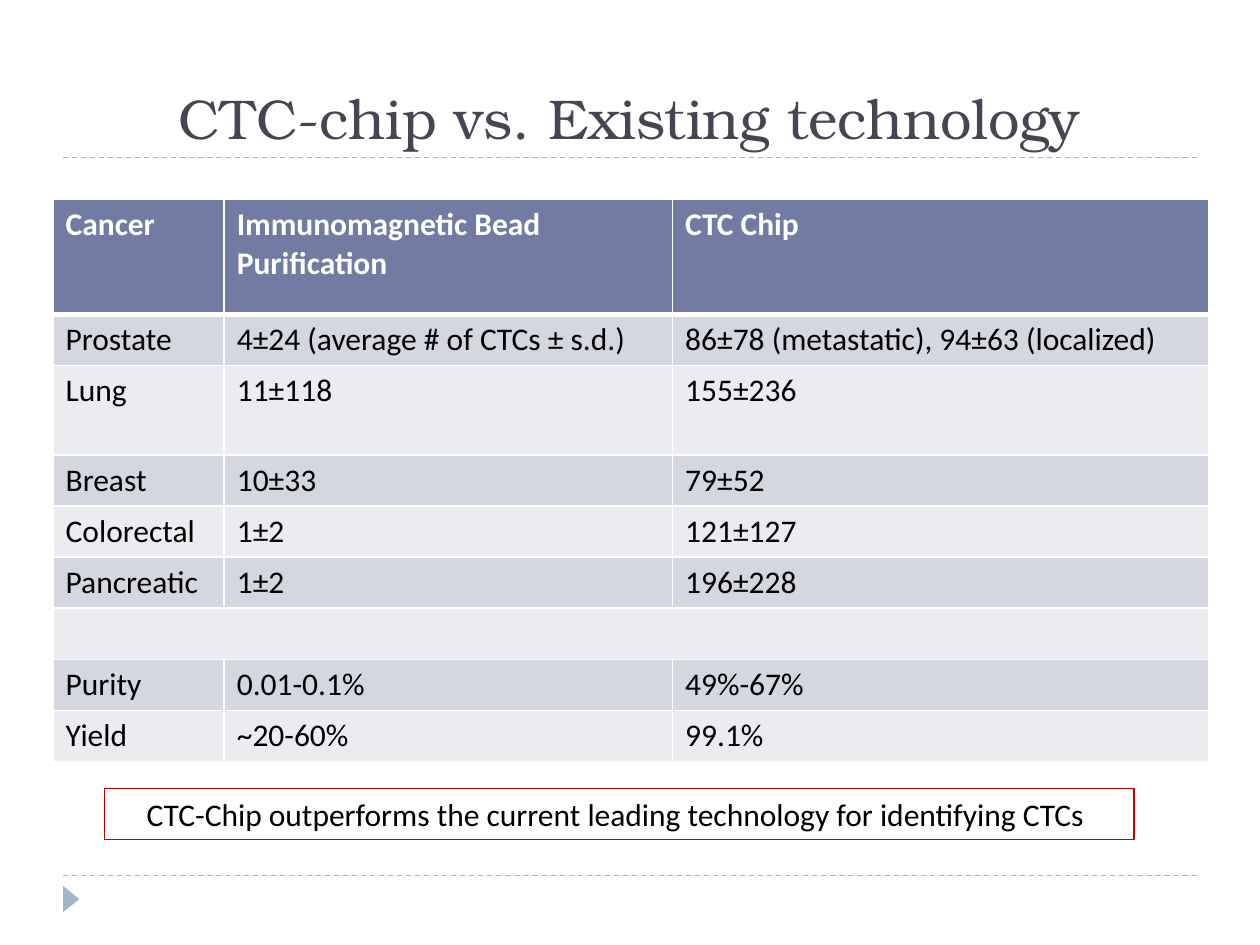
from lxml.etree import SubElement
from pptx import Presentation
from pptx.dml.color import RGBColor
from pptx.enum.dml import MSO_LINE
from pptx.enum.shapes import MSO_CONNECTOR as Connector, MSO_SHAPE as Shape
from pptx.enum.text import MSO_ANCHOR as Anchor, PP_ALIGN as Align
from pptx.oxml.ns import qn
from pptx.util import Cm, Pt

TITLE_FORMAT = {"name": "TeX Gyre Bonum", "size": Pt(32), "bold": False}
HEADER_FORMAT = {"name": "Calibri", "size": Pt(18), "bold": True}
BODY_FORMAT = {**HEADER_FORMAT, "bold": False}

COLUMN_WIDTHS = (3.45, 9.04, 10.8)
ROW_HEIGHT, HEADER_HEIGHT, LUNG_HEIGHT = 1.03, 2.32, 1.8
HEADER_FILL, BAND_FILLS = "727CA3", ("D5D7E0", "EBECF0")
ROWS = (
    ("Cancer", "Immunomagnetic Bead Purification", "CTC Chip"),
    ("Prostate", "4±24 (average # of CTCs ± s.d.)",
     "86±78 (metastatic), 94±63 (localized)"),
    ("Lung", "11±118", "155±236"),
    ("Breast", "10±33", "79±52"),
    ("Colorectal", "1±2", "121±127"),
    ("Pancreatic", "1±2", "196±228"),
    ("",),
    ("Purity", "0.01-0.1%", "49%-67%"),
    ("Yield", "~20-60%", "99.1%"),
)


def color(value):
    return RGBColor.from_string(value)


def format_para(para, values, font_color, align=Align.LEFT):
    para.alignment = align
    for name, value in values.items():
        setattr(para.font, name, value)
    para.font.color.rgb = color(font_color)


def set_title(slide, text):
    title = slide.shapes.title
    place = {"left": 1.27, "top": 0.43, "width": 22.86, "height": 2.74}
    for name, value in place.items():
        setattr(title, name, Cm(value))
    frame = title.text_frame
    frame.text = text
    frame.vertical_anchor = Anchor.BOTTOM
    format_para(frame.paragraphs[0], TITLE_FORMAT, "464653", Align.CENTER)


def add_rule(slide, y):
    """Draw a dashed horizontal line across the slide's margins."""
    rule = slide.shapes.add_connector(
        Connector.STRAIGHT, Cm(1.27), Cm(y), Cm(24.13), Cm(y))
    rule.line.color.rgb = color("9FB8CD")
    rule.line.width = Pt(0.75)
    rule.line.dash_style = MSO_LINE.DASH
    SubElement(rule._element.spPr, qn("a:effectLst"))


def add_marker(slide):
    marker = slide.shapes.add_shape(
        Shape.ISOSCELES_TRIANGLE, Cm(1.17), Cm(17.96), Cm(0.53), Cm(0.33))
    marker.rotation = 90
    marker.shadow.inherit = False
    marker.fill.solid()
    marker.fill.fore_color.rgb = color("9FB8CD")
    marker.line.fill.background()


def set_borders(cell, widths):
    """Give the cell white borders; widths maps a border tag to points."""
    properties = cell._tc.get_or_add_tcPr()
    for tag, width in widths.items():
        border = SubElement(properties, qn(f"a:{tag}"), w=str(Pt(width)))
        fill = SubElement(border, qn("a:solidFill"))
        SubElement(fill, qn("a:srgbClr"), val="FFFFFF")


def fill_cell(cell, text, row_index):
    is_header = row_index == 0
    set_borders(cell, {"lnL": 1, "lnR": 1, "lnT": 3 if row_index == 1 else 1,
                       "lnB": 3 if is_header else 1})
    cell.fill.solid()
    cell.fill.fore_color.rgb = color(
        HEADER_FILL if is_header else BAND_FILLS[(row_index - 1) % 2])
    cell.text = text
    format_para(cell.text_frame.paragraphs[0],
                HEADER_FORMAT if is_header else BODY_FORMAT,
                "FFFFFF" if is_header else "000000")


def add_comparison_table(slide):
    heights = [ROW_HEIGHT] * len(ROWS)
    heights[0], heights[2] = HEADER_HEIGHT, LUNG_HEIGHT
    table = slide.shapes.add_table(
        len(ROWS), len(COLUMN_WIDTHS), Cm(1.07), Cm(4.02),
        Cm(sum(COLUMN_WIDTHS)), Cm(sum(heights))).table
    for column, width in zip(table.columns, COLUMN_WIDTHS):
        column.width = Cm(width)
    for row_index, texts in enumerate(ROWS):
        table.rows[row_index].height = Cm(heights[row_index])
        cells = table.rows[row_index].cells
        if len(texts) == 1:
            table.cell(row_index, 0).merge(
                table.cell(row_index, len(COLUMN_WIDTHS) - 1))
        for cell, text in zip(cells, texts):
            fill_cell(cell, text, row_index)


def add_conclusion(slide, text):
    box = slide.shapes.add_shape(
        Shape.RECTANGLE, Cm(2.11), Cm(15.9), Cm(20.75), Cm(1.03))
    box.shadow.inherit = False
    box.fill.background()
    box.line.color.rgb = color("C00000")
    box.line.width = Pt(0.75)
    frame = box.text_frame
    frame.word_wrap = True
    frame.vertical_anchor = Anchor.TOP
    frame.text = text
    format_para(frame.paragraphs[0], BODY_FORMAT, "000000", Align.CENTER)


def main():
    deck = Presentation()
    deck.slide_width, deck.slide_height = Cm(25.4), Cm(19.05)
    slide = deck.slides.add_slide(deck.slide_layouts[5])
    for y in (17.65, 3.18):
        add_rule(slide, y)
    add_marker(slide)
    set_title(slide, "CTC-chip vs. Existing technology")
    add_comparison_table(slide)
    add_conclusion(slide, "CTC-Chip outperforms the current leading "
                          "technology for identifying CTCs ")
    deck.save("out.pptx")


if __name__ == "__main__":
    main()
